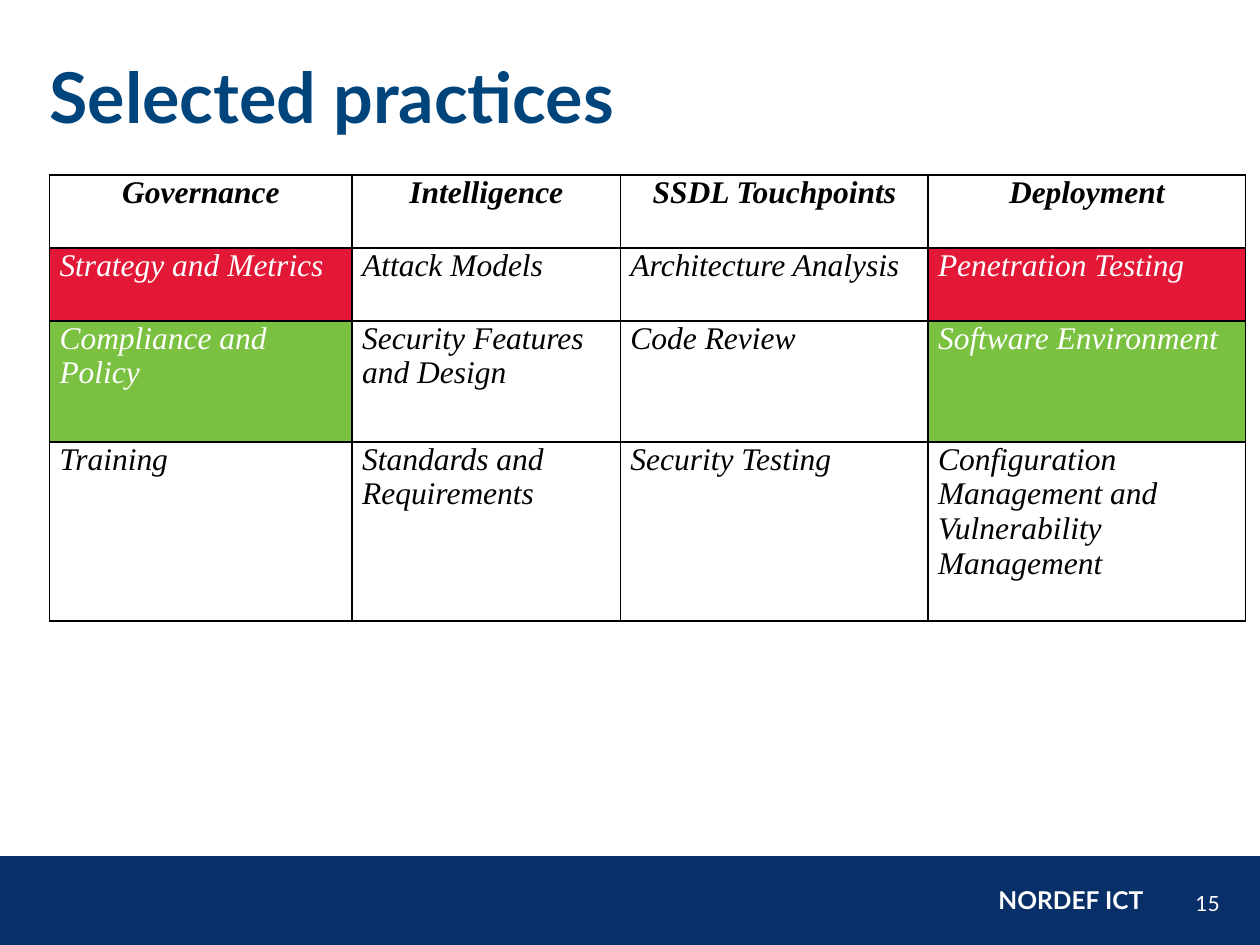
from lxml.etree import SubElement as Sub
from pptx import Presentation
from pptx.dml.color import RGBColor as Rgb
from pptx.enum.shapes import MSO_SHAPE as Shape
from pptx.enum.text import MSO_ANCHOR as Anchor, PP_ALIGN as Align
from pptx.oxml.ns import qn
from pptx.util import Cm, Pt

WHITE = Rgb(0xFF, 0xFF, 0xFF)
BLACK = Rgb(0, 0, 0)
NAVY = Rgb(0x08, 0x2F, 0x68)
BLUE = Rgb(0x00, 0x44, 0x7C)
RED = Rgb(0xE3, 0x18, 0x36)
GREEN = Rgb(0x7A, 0xC1, 0x42)

COLS = [6.1, 5.41, 6.2, 6.4]
ROWS = [1.47, 1.47, 2.44, 3.61]
FILLS = [None, RED, GREEN, None]
CELLS = [
    ["Governance", "Intelligence", "SSDL Touchpoints", "Deployment"],
    ["Strategy and Metrics", "Attack Models", "Architecture Analysis",
     "Penetration Testing"],
    ["Compliance and Policy", "Security Features and Design", "Code Review",
     "Software Environment"],
    ["Training", "Standards and Requirements", "Security Testing",
     "Configuration Management and Vulnerability Management"],
]


def style(font, name, size, color, bold=False, italic=False):
    font.name = name
    font.size = Pt(size)
    font.color.rgb = color
    font.bold = bold
    font.italic = italic


def add_text(slide, box, text, size, color, bold, align=Align.LEFT):
    frame = slide.shapes.add_textbox(*map(Cm, box)).text_frame
    frame.word_wrap = True
    frame.text = text
    para = frame.paragraphs[0]
    para.alignment = align
    style(para.runs[0].font, "Lato", size, color, bold)
    return frame


def add_title(slide, left, top, width, height):
    box = left, top, width, height
    frame = add_text(slide, box, "Selected practices", 40, BLUE, True)
    frame.margin_left = 0


def add_footer(slide, left, top, width, height):
    bar = slide.shapes.add_shape(
        Shape.RECTANGLE, *map(Cm, (left, top, width, height)))
    bar.shadow.inherit = False
    bar.fill.solid()
    bar.fill.fore_color.rgb = NAVY
    bar.line.fill.background()
    unit = left + width - 13.1, top + 0.46, 11, 0.86
    add_text(slide, unit, "NORDEF ICT", 14, WHITE, True, Align.RIGHT)
    page = left + width - 1.98, top + 0.56, 1.42, 0.79
    frame = add_text(slide, page, "15", 12, WHITE, False, Align.RIGHT)
    frame.vertical_anchor = Anchor.MIDDLE


def add_edges(cell):
    props = cell._tc.get_or_add_tcPr()
    for side in ("lnL", "lnR", "lnT", "lnB"):
        line = Sub(props, qn(f"a:{side}"), w=str(Pt(1)))
        fill = Sub(line, qn("a:solidFill"))
        Sub(fill, qn("a:srgbClr"), val=str(BLACK))


def fill_cell(cell, text, head, fill):
    cell.margin_left = cell.margin_right = Cm(0.2)
    cell.margin_top = cell.margin_bottom = 0
    add_edges(cell)
    if fill:
        cell.fill.solid()
        cell.fill.fore_color.rgb = fill
    else:
        cell.fill.background()
    cell.text_frame.text = text
    para = cell.text_frame.paragraphs[0]
    para.alignment = Align.CENTER if head else Align.LEFT
    style(para.runs[0].font, "Times New Roman", 18,
          WHITE if fill else BLACK, head, True)


def add_grid(slide, left, top):
    box = left, top, sum(COLS), sum(ROWS)
    table = slide.shapes.add_table(
        len(ROWS), len(COLS), *map(Cm, box)).table
    table.first_row = table.horz_banding = False
    for col, width in zip(table.columns, COLS):
        col.width = Cm(width)
    for row, height in zip(table.rows, ROWS):
        row.height = Cm(height)
    ends = 0, len(COLS) - 1
    for r, words in enumerate(CELLS):
        for c, text in enumerate(words):
            fill = FILLS[r] if c in ends else None
            fill_cell(table.cell(r, c), text, r == 0, fill)


def main():
    deck = Presentation()
    deck.slide_width, deck.slide_height = Cm(25.4), Cm(19.05)
    slide = deck.slides.add_slide(deck.slide_layouts[6])
    add_footer(slide, 0, 17.26, 25.4, 1.79)
    add_title(slide, 1, 0.95, 23.4, 1.78)
    add_grid(slide, 1, 3.53)
    deck.save("out.pptx")


if __name__ == "__main__":
    main()
